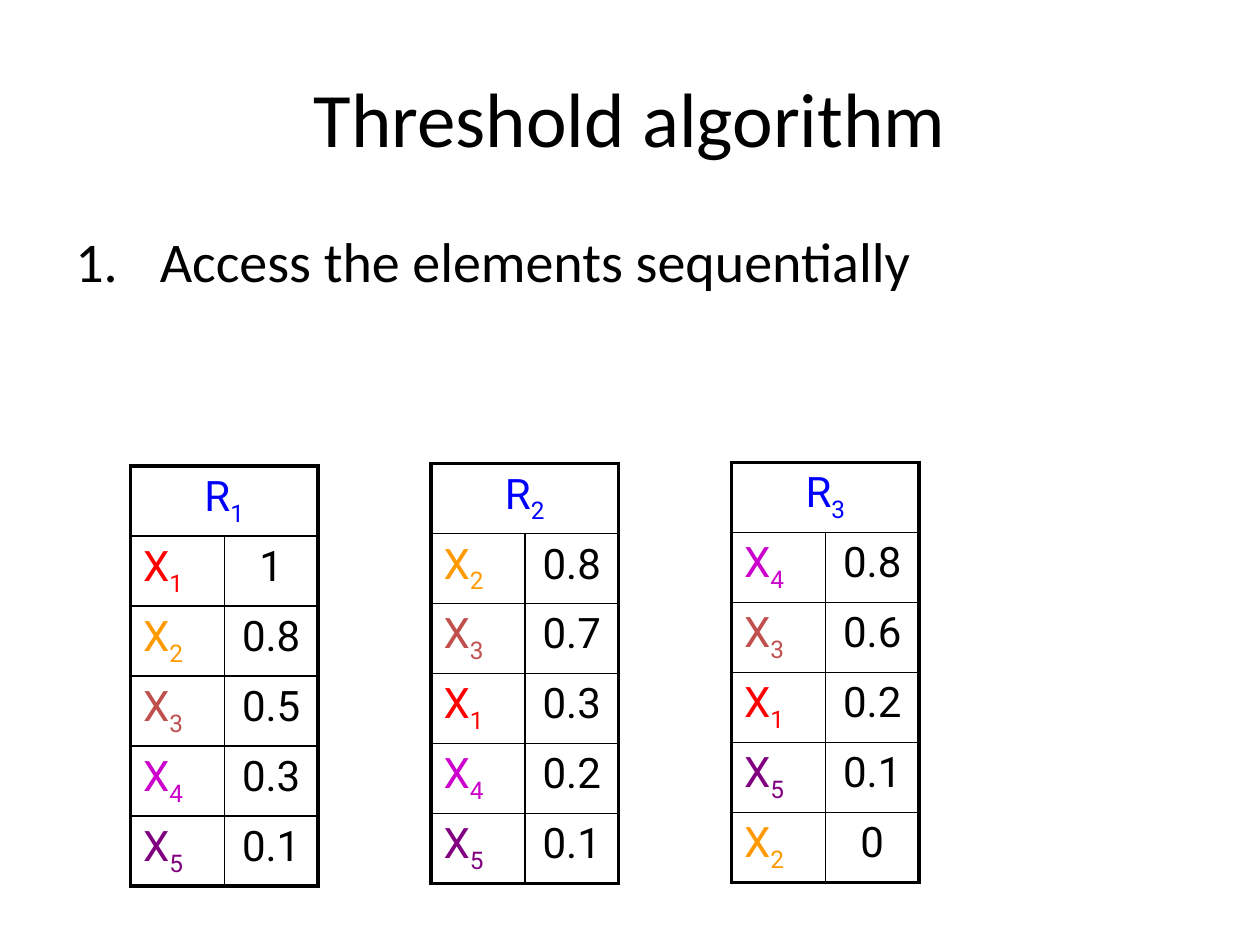
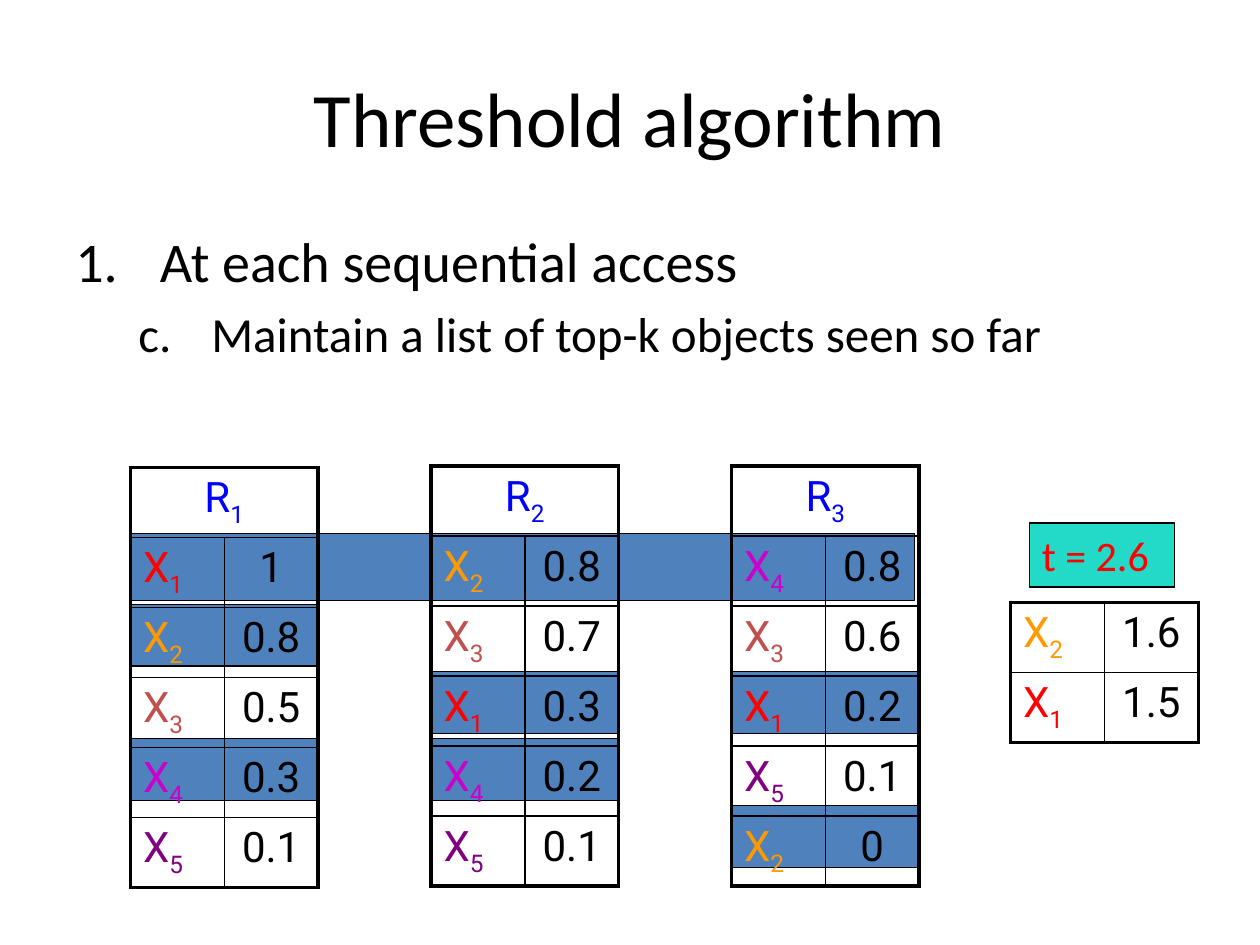
"""Two slides on the threshold algorithm, with ranked lists drawn as tables."""
from lxml import etree
from pptx import Presentation
from pptx.dml.color import RGBColor
from pptx.enum.shapes import MSO_SHAPE
from pptx.enum.text import MSO_ANCHOR, PP_ALIGN
from pptx.oxml.ns import qn
from pptx.util import Inches, Pt

RECT = MSO_SHAPE.RECTANGLE
MIDDLE = MSO_ANCHOR.MIDDLE
LEFT, CENTER = PP_ALIGN.LEFT, PP_ALIGN.CENTER

BLACK = RGBColor(0x00, 0x00, 0x00)
BLUE = RGBColor(0x00, 0x00, 0xFF)
RED = RGBColor(0xFF, 0x00, 0x00)
ORANGE = RGBColor(0xFF, 0x99, 0x00)
BRICK = RGBColor(0xC0, 0x50, 0x4D)
MAGENTA = RGBColor(0xCC, 0x00, 0xCC)
PURPLE = RGBColor(0x80, 0x00, 0x80)
STEEL = RGBColor(0x4F, 0x81, 0xBD)
TURQUOISE = RGBColor(0x23, 0xD9, 0xC8)
OBJECT_COLORS = {"X1": RED, "X2": ORANGE, "X3": BRICK, "X4": MAGENTA, "X5": PURPLE}

TEXT_FONT, TABLE_FONT = "Calibri", "Roboto"
COLS, ROWS = 100, 75
LIST_LEFT, LIST_PITCH = 10.35, 23.85
TABLE_WIDTH, ROW_HEIGHT = 14.9, 5.33
OUTER, INNER = 2.25, 1

RANKINGS = {
    "R1": [("X1", "1"), ("X2", "0.8"), ("X3", "0.5"), ("X4", "0.3"), ("X5", "0.1")],
    "R2": [("X2", "0.8"), ("X3", "0.7"), ("X1", "0.3"), ("X4", "0.2"), ("X5", "0.1")],
    "R3": [("X4", "0.8"), ("X3", "0.6"), ("X1", "0.2"), ("X5", "0.1"), ("X2", "0")],
}
TOP_K = [("X2", "1.6"), ("X1", "1.5")]


class Deck:
    """Holds the shared style and the current slide."""

    def __init__(self):
        self.prs = Presentation()
        self.prs.slide_width, self.prs.slide_height = Inches(10), Inches(7.5)
        self.col = self.prs.slide_width / COLS
        self.row = self.prs.slide_height / ROWS

    def box(self, x, y, w, h):
        """Turn grid units into slide lengths."""
        return (round(x * self.col), round(y * self.row),
                round(w * self.col), round(h * self.row))

    def add_slide(self, title):
        """Start a slide with its centred title."""
        self.slide = self.prs.slides.add_slide(self.prs.slide_layouts[6])
        tf = self.textbox(5, 3, 90, 12.5)
        tf.vertical_anchor = MIDDLE
        p = tf.paragraphs[0]
        p.text = title
        p.alignment = CENTER
        self.style(p.runs[0], 44)

    def textbox(self, x, y, w, h):
        """Add a wrapping text box and return its text frame."""
        tf = self.slide.shapes.add_textbox(*self.box(x, y, w, h)).text_frame
        tf.word_wrap = True
        return tf

    def style(self, r, size, color=BLACK, font=TEXT_FONT):
        """Format a run."""
        r.font.size, r.font.name = Pt(size), font
        r.font.color.rgb = color

    def space_before(self, p):
        """Put a fifth of a line before a paragraph."""
        spacing = etree.SubElement(p._p.get_or_add_pPr(), qn("a:spcBef"))
        etree.SubElement(spacing, qn("a:spcPct"), val="20000")

    def outline(self, items):
        """Add the numbered body text, one level deeper per item."""
        levels = [(32, 0.67, 0.67, "arabicPeriod", 1),
                  (28, 1.08, 0.58, "alphaLcPeriod", 3)]
        tf = self.textbox(5, 17.5, 90, 49.5)
        tf.text = "\n".join(items)
        for level, p in enumerate(tf.paragraphs):
            size, margin, hanging, numbering, start = levels[level]
            p.level = level
            self.style(p.runs[0], size)
            self.space_before(p)
            pPr = p._p.get_or_add_pPr()
            pPr.set("marL", str(Inches(margin)))
            pPr.set("indent", str(-Inches(hanging)))
            etree.SubElement(pPr, qn("a:buAutoNum"), type=numbering, startAt=str(start))

    def rect(self, x, y, w, h, fill=STEEL):
        """Add a thinly outlined rectangle."""
        sp = self.slide.shapes.add_shape(RECT, *self.box(x, y, w, h))
        sp.shadow.inherit = False
        sp.fill.solid()
        sp.fill.fore_color.rgb = fill
        sp.line.color.rgb = BLACK
        sp.line.width = Pt(0.75)
        return sp

    def label(self, text, x, y, w, h):
        """Add the turquoise threshold label."""
        tf = self.rect(x, y, w, h, TURQUOISE).text_frame
        tf.word_wrap = False
        tf.text = text
        tf.paragraphs[0].alignment = LEFT
        self.style(tf.paragraphs[0].runs[0], 24, RED)

    def cell(self, cell, text, color, align, subscript=False):
        """Fill a cell, lowering the characters after the first if asked."""
        p = cell.text_frame.paragraphs[0]
        p.alignment = align
        self.space_before(p)
        for i, part in enumerate(text if subscript else [text]):
            r = p.add_run()
            r.text = part
            self.style(r, 24, color, TABLE_FONT)
            if i:
                r.font._element.set("baseline", "-25000")

    def borders(self, cell, widths):
        """Draw the left, right, top and bottom borders of a cell."""
        tcPr = cell._tc.get_or_add_tcPr()
        for side, width in zip("LRTB", widths):
            ln = etree.SubElement(tcPr, qn(f"a:ln{side}"), w=str(Pt(width)))
            fill = etree.SubElement(ln, qn("a:solidFill"))
            etree.SubElement(fill, qn("a:srgbClr"), val=str(BLACK))
        cell.fill.background()

    def table(self, x, y, scores, header=None):
        """Add a table of objects and scores, with an optional merged header."""
        first = 1 if header else 0
        count = len(scores) + first
        table = self.slide.shapes.add_table(
            count, 2, *self.box(x, y, TABLE_WIDTH, count * ROW_HEIGHT)).table
        table.first_row = table.horz_banding = False
        if header:
            table.cell(0, 0).merge(table.cell(0, 1))
            self.cell(table.cell(0, 0), header, BLUE, CENTER, True)
        for i, (name, score) in enumerate(scores, first):
            self.cell(table.cell(i, 0), name, OBJECT_COLORS[name], LEFT, True)
            self.cell(table.cell(i, 1), score, BLACK, CENTER)
        for i in range(count):
            for j in range(2):
                cell = table.cell(i, j)
                edges = (j == 0, j == 1 or cell.is_merge_origin, i == 0, i == count - 1)
                self.borders(cell, [OUTER if edge else INNER for edge in edges])

    def rankings(self, tops):
        """Add the ranked lists side by side."""
        for i, (name, scores) in enumerate(RANKINGS.items()):
            self.table(LIST_LEFT + i * LIST_PITCH, tops[i], scores, name)

    def highlights(self, top):
        """Mark the first row and every later place of the objects seen in it."""
        seen = {scores[0][0] for scores in RANKINGS.values()}
        for i, scores in enumerate(RANKINGS.values()):
            for j, (name, _) in enumerate(scores[1:], 2):
                if name in seen:
                    self.rect(LIST_LEFT + i * LIST_PITCH, top + j * ROW_HEIGHT + 0.3,
                              TABLE_WIDTH, 4.9)
        self.rect(10.3, top + ROW_HEIGHT, 62.3, ROW_HEIGHT)


def main():
    """Build and save both slides."""
    deck = Deck()
    title = "Threshold algorithm"

    deck.add_slide(title)
    deck.outline(["Access the elements sequentially"])
    deck.rankings([37, 36.8, 36.7])

    deck.add_slide(title)
    deck.outline(["At each sequential access",
                  "Maintain a list of top-k objects seen so far"])
    deck.highlights(37)
    deck.rankings([37.1, 37, 37])
    deck.table(80.2, 47.8, TOP_K)
    deck.label("t = 2.6", 81.7, 41.5, 11.5, 5.1)

    deck.prs.save("out.pptx")


if __name__ == "__main__":
    main()
